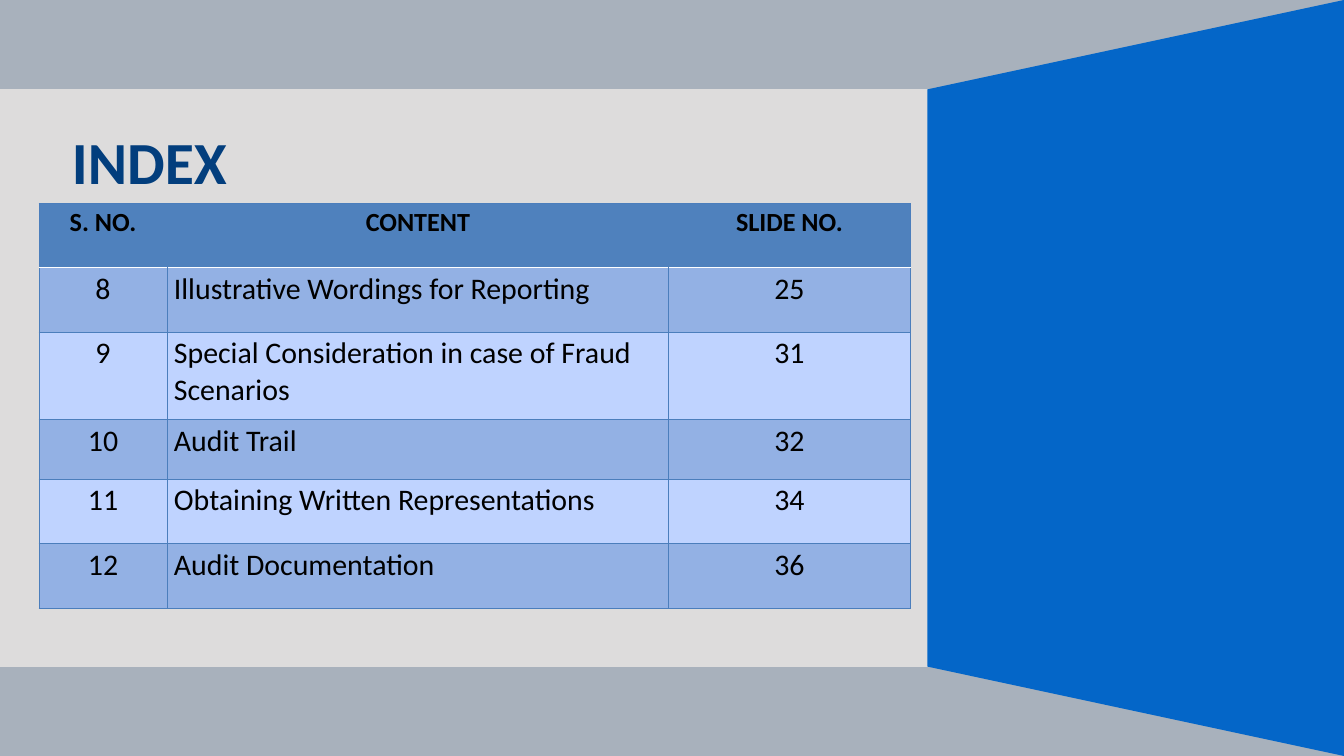
from lxml import etree
from pptx import Presentation
from pptx.dml.color import RGBColor
from pptx.enum.text import MSO_ANCHOR, MSO_AUTO_SIZE, PP_ALIGN
from pptx.oxml.ns import qn
from pptx.util import Cm, Pt

LEFT, CENTER = PP_ALIGN.LEFT, PP_ALIGN.CENTER
TOP = MSO_ANCHOR.TOP
FIT_SHAPE = MSO_AUTO_SIZE.SHAPE_TO_FIT_TEXT

BACKDROP = RGBColor(0xA8, 0xB1, 0xBC)
PANEL = RGBColor(0xDD, 0xDC, 0xDC)
BLUE = RGBColor(0x04, 0x66, 0xC8)
NAVY = RGBColor(0x02, 0x3E, 0x7D)
BLACK = RGBColor(0x00, 0x00, 0x00)
WHITE = RGBColor(0xFF, 0xFF, 0xFF)
HEADER = RGBColor(0x4F, 0x81, 0xBD)
DARK_BAND = RGBColor(0x93, 0xB1, 0xE4)
LIGHT_BAND = RGBColor(0xBF, 0xD3, 0xFF)
BORDER = RGBColor(0x4B, 0x7E, 0xBC)

FONT = "Calibri"
WIDTH, HEIGHT = 50.8, 28.58
PANEL_TOP, PANEL_BOTTOM = 3.38, 25.2
FOLD = 35.05

COLUMN_WIDTHS = [4.85, 18.95, 9.14]
ROW_HEIGHTS = [2.41, 2.44, 3.3, 2.26, 2.44, 2.44]
ROWS = [
    ("S. NO.", "CONTENT", "SLIDE NO."),
    ("8", "Illustrative Wordings for Reporting", "25"),
    ("9", "Special Consideration in case of Fraud Scenarios", "31"),
    ("10", "Audit Trail", "32"),
    ("11", "Obtaining Written Representations", "34"),
    ("12", "Audit Documentation", "36"),
]


def set_attrs(obj, values):
    for name, value in values.items():
        setattr(obj, name, value)


def add_panel(slide, points, color):
    corners = [(Cm(x), Cm(y)) for x, y in points]
    builder = slide.shapes.build_freeform(*corners[0])
    builder.add_line_segments(corners[1:], close=True)
    sp = builder.convert_to_shape()
    sp.shadow.inherit = False
    sp.fill.solid()
    sp.fill.fore_color.rgb = color
    sp.line.fill.background()


def write(p, text, size, color, bold, align):
    p.alignment = align
    r = p.add_run()
    r.text = text
    set_attrs(r.font, {"name": FONT, "size": Pt(size), "bold": bold})
    r.font.color.rgb = color


def add_title(slide, text):
    sp = slide.shapes.title
    set_attrs(sp, {"left": Cm(2.72), "top": Cm(4.27),
                   "width": Cm(18.69), "height": Cm(3.05)})
    tf = sp.text_frame
    set_attrs(tf, {"margin_left": 0, "margin_top": 0, "margin_right": 0,
                   "margin_bottom": 0, "vertical_anchor": TOP,
                   "word_wrap": True, "auto_size": FIT_SHAPE})
    p = tf.paragraphs[0]
    p.line_spacing = Pt(89.6)
    write(p, text, 64, NAVY, True, LEFT)
    slide.shapes._spTree.append(sp._element)


def set_borders(cell, borders):
    tcPr = cell._tc.get_or_add_tcPr()
    for i, (side, (color, width)) in enumerate(borders.items()):
        ln = etree.Element(qn(f"a:ln{side}"), w=str(Pt(width)))
        if color is None:
            etree.SubElement(ln, qn("a:noFill"))
        else:
            fill = etree.SubElement(ln, qn("a:solidFill"))
            etree.SubElement(fill, qn("a:srgbClr"), val=str(color))
        tcPr.insert(i, ln)


def cell_borders(row, col):
    borders = {side: (BORDER, 0.75) for side in "LRTB"}
    if row == 0:
        borders["B"] = (WHITE, 2)
        if col > 0:
            borders["L"] = (None, 0)
        if col < len(COLUMN_WIDTHS) - 1:
            borders["R"] = (None, 0)
    elif row == 1:
        borders["T"] = (WHITE, 2)
    return borders


def add_index_table(slide):
    table = slide.shapes.add_table(
        len(ROWS), len(COLUMN_WIDTHS), Cm(1.47), Cm(7.7),
        Cm(sum(COLUMN_WIDTHS)), Cm(sum(ROW_HEIGHTS))).table
    for column, width in zip(table.columns, COLUMN_WIDTHS):
        column.width = Cm(width)
    for row, height in zip(table.rows, ROW_HEIGHTS):
        row.height = Cm(height)
    for i, texts in enumerate(ROWS):
        is_header = i == 0
        band = DARK_BAND if i % 2 else LIGHT_BAND
        for j, text in enumerate(texts):
            cell = table.cell(i, j)
            cell.fill.solid()
            cell.fill.fore_color.rgb = HEADER if is_header else band
            set_borders(cell, cell_borders(i, j))
            write(cell.text_frame.paragraphs[0], text,
                  28 if is_header else 32, BLACK, is_header,
                  LEFT if j == 1 and not is_header else CENTER)


def main():
    prs = Presentation()
    set_attrs(prs, {"slide_width": Cm(WIDTH), "slide_height": Cm(HEIGHT)})
    slide = prs.slides.add_slide(prs.slide_layouts[5])
    slide.background.fill.solid()
    slide.background.fill.fore_color.rgb = BACKDROP
    add_panel(slide, [(0, PANEL_TOP), (45.64, PANEL_TOP),
                      (45.64, PANEL_BOTTOM), (0, PANEL_BOTTOM)], PANEL)
    add_panel(slide, [(FOLD, PANEL_BOTTOM), (FOLD, PANEL_TOP),
                      (WIDTH, 0), (WIDTH, HEIGHT)], BLUE)
    add_title(slide, "INDEX")
    add_index_table(slide)
    prs.save("out.pptx")


if __name__ == "__main__":
    main()
